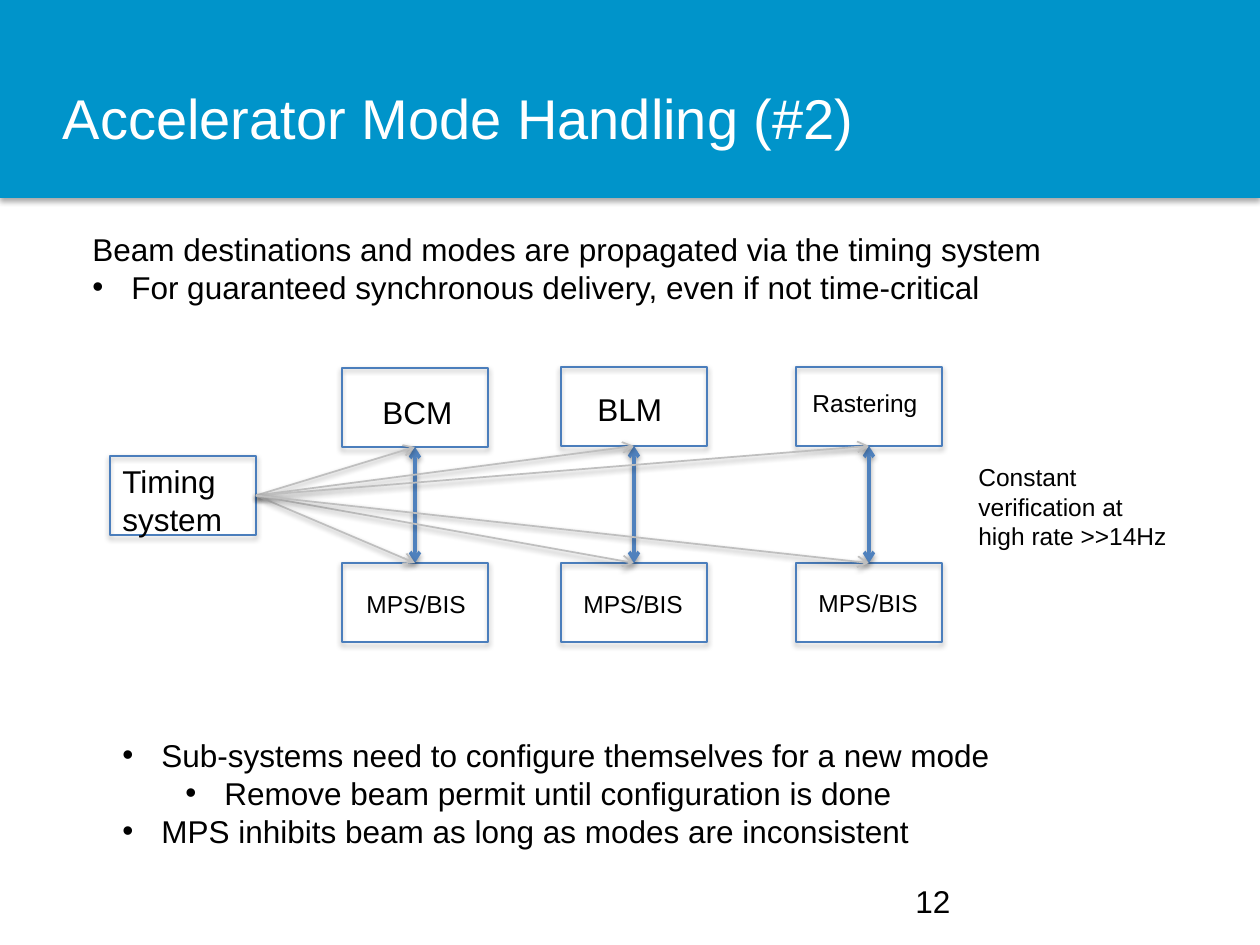
from lxml import etree
from pptx import Presentation
from pptx.dml.color import RGBColor
from pptx.enum.shapes import MSO_CONNECTOR, MSO_SHAPE
from pptx.enum.text import MSO_ANCHOR
from pptx.oxml import parse_xml
from pptx.oxml.ns import nsdecls, qn
from pptx.util import Emu, Pt

RECTANGLE = MSO_SHAPE.RECTANGLE
STRAIGHT = MSO_CONNECTOR.STRAIGHT
TOP, MIDDLE = MSO_ANCHOR.TOP, MSO_ANCHOR.MIDDLE
SITE_TOP, SITE_BOTTOM, SITE_RIGHT = 0, 2, 3

BANNER_BLUE = RGBColor(0x00, 0x94, 0xCA)
BOX_BLUE = RGBColor(0x4B, 0x7E, 0xBC)
ARROW_BLUE = RGBColor(0x4F, 0x81, 0xBD)
GREY = RGBColor(0xBF, 0xBF, 0xBF)
BLACK = RGBColor(0x00, 0x00, 0x00)
WHITE = RGBColor(0xFF, 0xFF, 0xFF)

SCALE = 914400 / 126
BULLET_HANG = 39
BOX_WIDTH, BOX_HEIGHT = 146, 79


def px(*lengths):
    return [Emu(round(length * SCALE)) for length in lengths]


def add_text(text, area, size=18, color=BLACK, anchor=TOP, wrap=False, inset=None, bullets=()):
    frame = slide.shapes.add_textbox(*px(*area)).text_frame
    frame.word_wrap = wrap
    frame.vertical_anchor = anchor
    if inset is not None:
        frame.margin_left = frame.margin_right = inset
        frame.margin_top = frame.margin_bottom = inset
    for index, line in enumerate(text.split("\n")):
        paragraph = frame.paragraphs[0] if index == 0 else frame.add_paragraph()
        if index < len(bullets) and bullets[index]:
            properties = paragraph._p.get_or_add_pPr()
            margin, hang = px(bullets[index], BULLET_HANG)
            properties.set("marL", str(margin))
            properties.set("indent", str(-hang))
            etree.SubElement(properties, qn("a:buFont")).set("typeface", "Arial")
            etree.SubElement(properties, qn("a:buChar")).set("char", "•")
        run = paragraph.add_run()
        run.text = line
        run.font.name = "Arial"
        run.font.size = Pt(size)
        run.font.color.rgb = color


deck = Presentation()
deck.slide_width, deck.slide_height = px(1260, 945)
slide = deck.slides.add_slide(deck.slide_layouts[6])

banner = slide.shapes.add_shape(RECTANGLE, *px(0, 0, 1260, 198))
banner.fill.solid()
banner.fill.fore_color.rgb = BANNER_BLUE
banner.line.fill.background()

add_text("Accelerator Mode Handling (#2)", (63, 38, 984, 158), size=32, color=WHITE,
         anchor=MIDDLE, wrap=True, inset=0)
add_text("12", (903, 876, 294, 50), anchor=MIDDLE, wrap=True)
add_text("Beam destinations and modes are propagated via the timing system\n"
         "For guaranteed synchronous delivery, even if not time-critical",
         (80, 224, 984, 89), bullets=(0, 39))

corners = [(110, 456)]
for left, upper_top in ((342, 368), (561, 367), (796, 367)):
    corners += [(left, upper_top), (left, 563)]
boxes = []
for left, top in corners:
    box = slide.shapes.add_shape(RECTANGLE, *px(left, top, BOX_WIDTH, BOX_HEIGHT))
    box.fill.background()
    box.line.color.rgb = BOX_BLUE
    box.line.width = Pt(1)
    boxes.append(box)
timing, uppers, lowers = boxes[0], boxes[1::2], boxes[2::2]

links = [(upper, SITE_BOTTOM, lower, SITE_TOP, ARROW_BLUE, 2, ("headEnd", "tailEnd"))
         for upper, lower in zip(uppers, lowers)]
for targets, site in ((uppers, SITE_BOTTOM), (lowers, SITE_TOP)):
    links += [(timing, SITE_RIGHT, target, site, GREY, 1, ("tailEnd",)) for target in targets]

arrows = []
for source, source_site, target, target_site, color, width, ends in links:
    arrow = slide.shapes.add_connector(STRAIGHT, 0, 0, 0, 0)
    arrow.begin_connect(source, source_site)
    arrow.end_connect(target, target_site)
    arrow.line.color.rgb = color
    arrow.line.width = Pt(width)
    for end in ends:
        etree.SubElement(arrow.line._get_or_add_ln(), qn(f"a:{end}")).set("type", "arrow")
    arrows.append(arrow)

for part in [banner, *boxes, *arrows]:
    opacity, distance = (38, 1.6) if part in arrows else (35, 1.8)
    part._element.spPr.append(parse_xml(
        f'<a:effectLst {nsdecls("a")}><a:outerShdw blurRad="{Pt(3.1)}" dist="{Pt(distance)}" '
        f'dir="5400000" rotWithShape="0"><a:srgbClr val="000000">'
        f'<a:alpha val="{opacity * 1000}"/></a:srgbClr></a:outerShdw></a:effectLst>'))

for label, area, size in (
    ("BCM", (370, 387, 96, 50), 18),
    ("BLM", (585, 384, 91, 50), 18),
    ("Rastering", (800, 382, 142, 43), 14),
    ("MPS/BIS", (354, 583, 126, 43), 14),
    ("MPS/BIS", (571, 583, 126, 43), 14),
    ("MPS/BIS", (806, 582, 126, 43), 14),
    ("Timing\nsystem", (110, 456, 126, 89), 18),
):
    add_text(label, area, size=size)

add_text("Constant verification at high rate >>14Hz", (966, 456, 215, 102), size=14, wrap=True)
add_text("Sub-systems need to configure themselves for a new mode\n"
         "Remove beam permit until configuration is done\n"
         "MPS inhibits beam as long as modes are inconsistent",
         (110, 730, 900, 165), bullets=(39, 102, 39))

deck.save("out.pptx")
